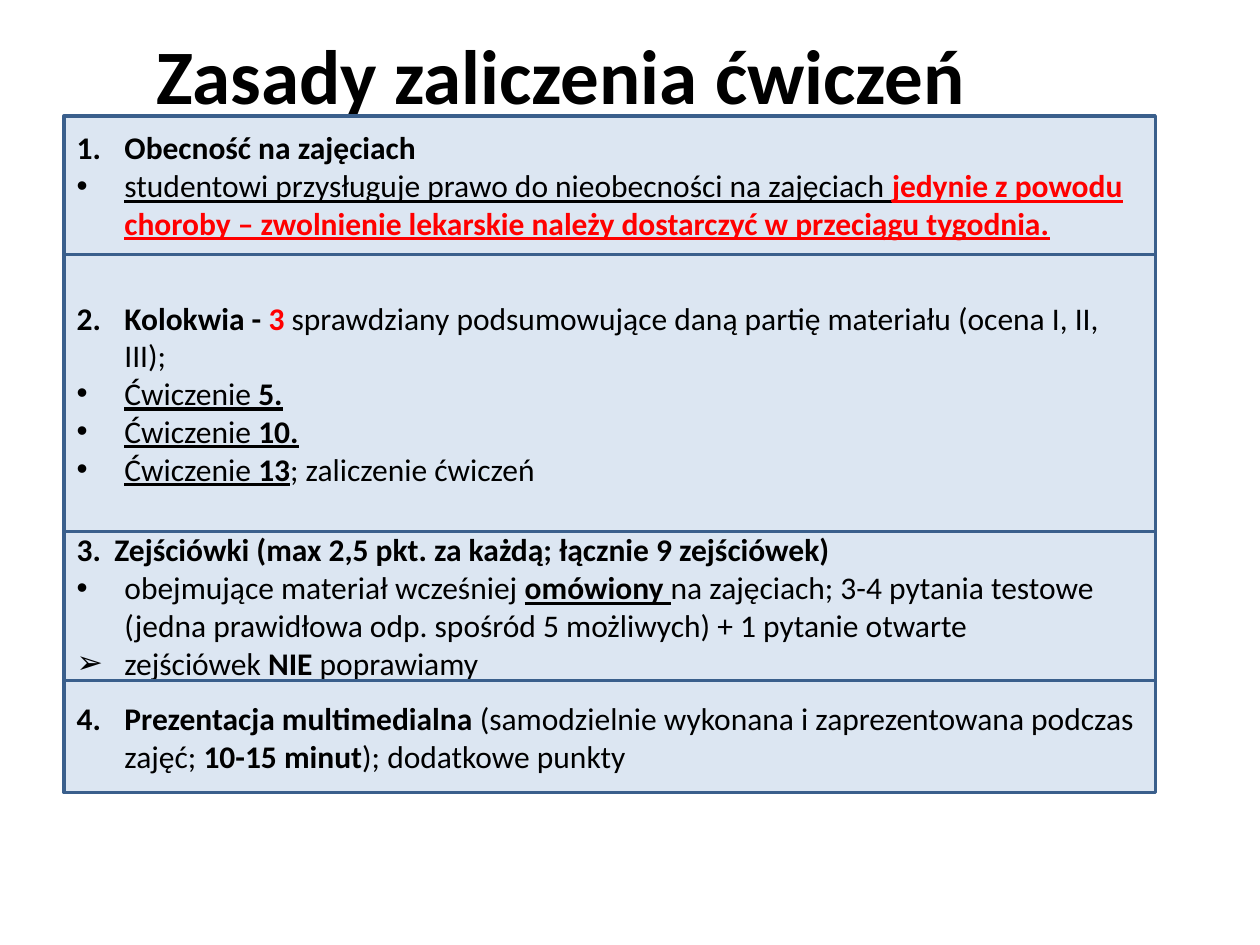
from lxml.etree import SubElement
from pptx import Presentation
from pptx.dml.color import RGBColor
from pptx.enum.shapes import MSO_SHAPE as Shape
from pptx.enum.text import MSO_ANCHOR as Anchor, PP_ALIGN as Align
from pptx.oxml.ns import qn
from pptx.util import Inches, Pt

BLACK, RED, PALE_BLUE, BLUE = "000000", "FF0000", "DCE6F2", "3A5F8C"
LEFT, WIDTH = 0.51, 8.66
HANG = 0.38

# Each rule: height and paragraphs; a paragraph is (marker, indent, runs).
# Run style letters: b bold, u underlined, r red.
rules = [
    (1.1, [
        ("1.", HANG, [("Obecność na zajęciach", "b")]),
        ("•", HANG, [
            ("studentowi przysługuje prawo do nieobecności na zajęciach ", "u"),
            ("jedynie z powodu choroby – zwolnienie lekarskie należy "
             "dostarczyć w przeciągu tygodnia.", "bur")]),
    ]),
    (2.2, [
        ("", HANG, [
            ("2.\tKolokwia - ", "b"), ("3", "br"),
            (" sprawdziany podsumowujące daną partię materiału "
             "(ocena I, II, III);", "")]),
        ("•", HANG, [("Ćwiczenie ", "u"), ("5.", "bu")]),
        ("•", HANG, [("Ćwiczenie ", "u"), ("10.", "bu")]),
        ("•", HANG, [("Ćwiczenie ", "u"), ("13", "bu"),
                     ("; zaliczenie ćwiczeń", "")]),
    ]),
    (1.18, [
        ("", 0.3, [("3.\tZejściówki (max 2,5 pkt. za każdą; "
                    "łącznie 9 zejściówek)", "b")]),
        ("•", HANG, [
            ("obejmujące materiał wcześniej ", ""), ("omówiony ", "bu"),
            ("na zajęciach; 3-4 pytania testowe (jedna prawidłowa odp. "
             "spośród 5 możliwych) + 1 pytanie otwarte", "")]),
        ("➢", HANG, [("zejściówek", ""), (" NIE ", "b"), ("poprawiamy", "")]),
    ]),
    (0.89, [
        ("", HANG, [
            ("4.\tPrezentacja multimedialna ", "b"),
            ("(samodzielnie wykonana i zaprezentowana podczas zajęć; ", ""),
            ("10-15 minut", "b"), ("); dodatkowe punkty", "")]),
    ]),
]


def style_font(font, size, color, bold, underline=False):
    font.name, font.size = "Calibri", Pt(size)
    font.bold, font.underline = bold, underline
    font.color.rgb = RGBColor.from_string(color)


def set_marker(paragraph, marker, indent):
    props = paragraph._p.get_or_add_pPr()
    props.set("marL", str(Inches(indent)))
    props.set("indent", str(-Inches(indent)))
    if marker == "1.":
        SubElement(props, qn("a:buFont"), typeface="+mj-lt")
        SubElement(props, qn("a:buAutoNum"), type="arabicPeriod")
    elif marker:
        SubElement(props, qn("a:buFont"), typeface="Arial")
        SubElement(props, qn("a:buChar"), char=marker)
    else:
        SubElement(props, qn("a:buNone"))


prs = Presentation()
prs.slide_width, prs.slide_height = Inches(10), Inches(7.5)
slide = prs.slides.add_slide(prs.slide_layouts[5])

# Title
title = slide.shapes.title
title.left, title.top = Inches(LEFT), 0
title.width, title.height = Inches(7.89), Inches(1.17)
title.text_frame.text = "Zasady zaliczenia ćwiczeń"
title.text_frame.vertical_anchor = Anchor.MIDDLE
heading = title.text_frame.paragraphs[0]
heading.alignment = Align.CENTER
style_font(heading.runs[0].font, 44, BLACK, True)

# Stacked rule boxes
top = 0.92
for height, paragraphs in rules:
    rule = slide.shapes.add_shape(Shape.RECTANGLE, Inches(LEFT), Inches(top),
                                  Inches(WIDTH), Inches(height))
    rule.shadow.inherit = False
    rule.fill.solid()
    rule.fill.fore_color.rgb = RGBColor.from_string(PALE_BLUE)
    rule.line.color.rgb = RGBColor.from_string(BLUE)
    rule.line.width = Pt(2)
    frame = rule.text_frame
    frame.word_wrap = True
    frame.vertical_anchor = Anchor.MIDDLE
    for number, (marker, indent, runs) in enumerate(paragraphs):
        paragraph = frame.add_paragraph() if number else frame.paragraphs[0]
        paragraph.alignment = Align.LEFT
        set_marker(paragraph, marker, indent)
        for words, style in runs:
            run = paragraph.add_run()
            run.text = words
            style_font(run.font, 18, RED if "r" in style else BLACK,
                       "b" in style, "u" in style)
    top += height

prs.save("out.pptx")
